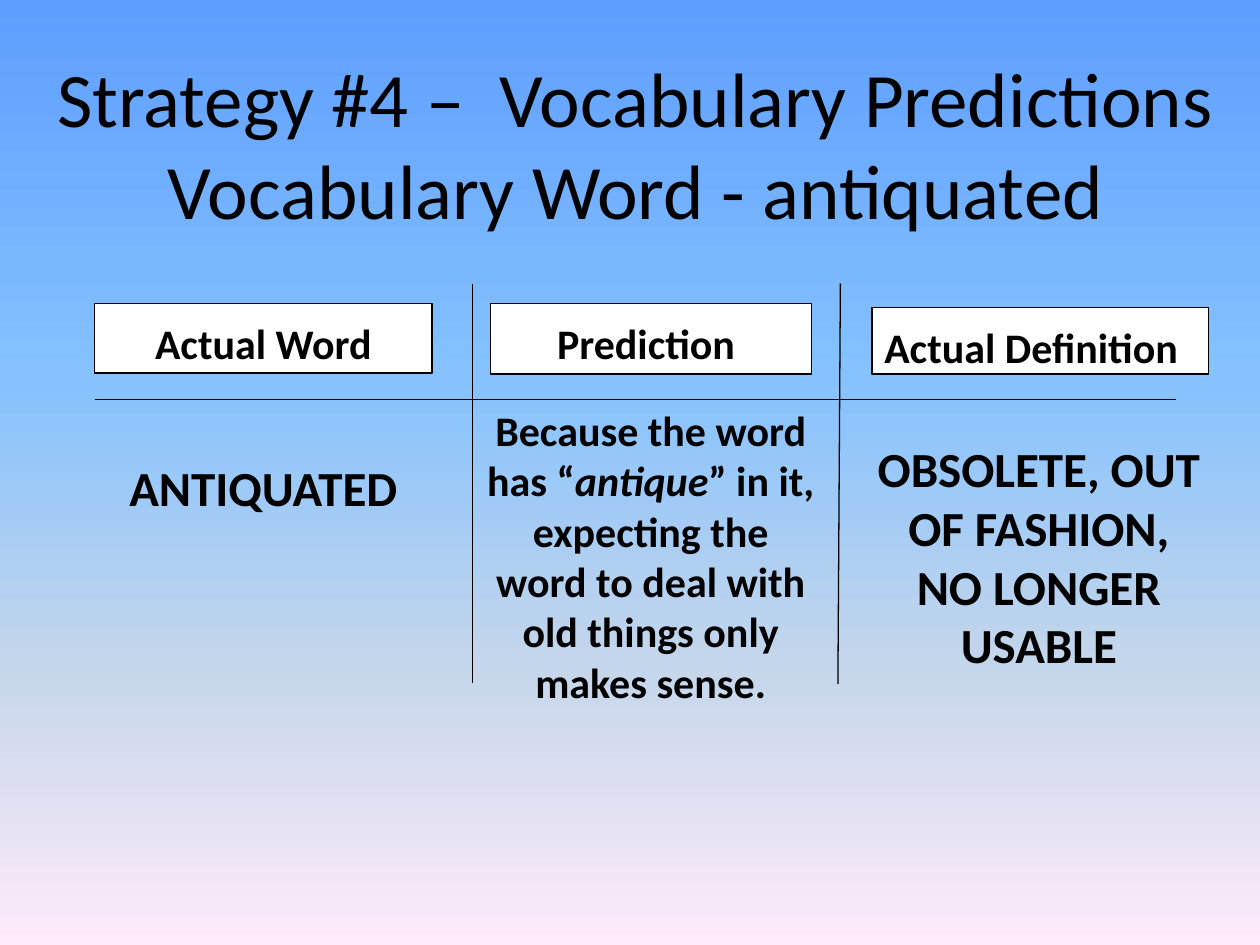
from dataclasses import dataclass

from lxml import etree
from pptx import Presentation
from pptx import util as u
from pptx.dml.color import RGBColor
from pptx.enum import shapes, text
from pptx.oxml.ns import qn


@dataclass(frozen=True)
class Theme:
    font: str = "Calibri"
    ink: str = "000000"
    paper: str = "FFFFFF"
    sky: tuple = ((0, "5E9EFF"), (40, "85C2FF"), (70, "C4D6EB"), (100, "FFEBFA"))
    title_size: int = 44
    large_size: int = 28
    body_size: int = 24
    line_width: float = 0.75


THEME = Theme()
CENTER = text.PP_ALIGN.CENTER
LEFT = text.PP_ALIGN.LEFT


def paint_background(page):
    """Fill the page with the theme's vertical gradient."""
    fill = page.background.fill
    fill.gradient()
    fill.gradient_angle = 270
    stops = page.element.find(".//" + qn("a:gsLst"))
    for stop in list(stops):
        stops.remove(stop)
    for percent, color in THEME.sky:
        stop = etree.SubElement(stops, qn("a:gs"), pos=str(percent * 1000))
        etree.SubElement(stop, qn("a:srgbClr"), val=color)


def style_line(line):
    line.color.rgb = RGBColor.from_string(THEME.ink)
    line.width = u.Pt(THEME.line_width)


def add_rule(page, start, end):
    points = [u.Inches(value) for value in (*start, *end)]
    rule = page.shapes.add_connector(shapes.MSO_CONNECTOR.STRAIGHT, *points)
    style_line(rule.line)
    etree.SubElement(rule.element.spPr, qn("a:effectLst"))


def add_span(para, words, size, bold=True, italic=False):
    span = para.add_run()
    span.text = words
    span.font.name = THEME.font
    span.font.size = u.Pt(size)
    span.font.bold = bold
    span.font.italic = italic
    span.font.color.rgb = RGBColor.from_string(THEME.ink)


def first_para(box, align, anchor=text.MSO_ANCHOR.TOP):
    frame = box.text_frame
    frame.word_wrap = True
    frame.vertical_anchor = anchor
    para = frame.paragraphs[0]
    para.alignment = align
    return para


def add_text_box(page, area, anchor=text.MSO_ANCHOR.TOP):
    """Add a text box and return its centred paragraph."""
    box = page.shapes.add_textbox(*map(u.Inches, area))
    return first_para(box, CENTER, anchor)


def add_header(page, area, words, align):
    box = page.shapes.add_shape(shapes.MSO_SHAPE.RECTANGLE, *map(u.Inches, area))
    box.shadow.inherit = False
    box.fill.solid()
    box.fill.fore_color.rgb = RGBColor.from_string(THEME.paper)
    style_line(box.line)
    para = first_para(box, align)
    para.line_spacing = 1.15
    para.space_after = u.Pt(10)
    add_span(para, words, THEME.body_size)


def main():
    deck = Presentation()
    deck.slide_width, deck.slide_height = u.Inches(10), u.Inches(7.5)
    page = deck.slides.add_slide(deck.slide_layouts[6])
    paint_background(page)

    # Title
    title = add_text_box(page, (0.17, 0.17, 9.75, 1.92), text.MSO_ANCHOR.MIDDLE)
    add_span(title, "Strategy #4 –  Vocabulary Predictions", THEME.title_size, bold=False)
    title.add_line_break()
    add_span(title, "Vocabulary Word - antiquated", THEME.title_size, bold=False)

    # Chart rules
    add_rule(page, (0.75, 3.17), (9.33, 3.17))
    add_rule(page, (3.75, 2.25), (3.75, 5.42))
    add_rule(page, (6.67, 2.25), (6.65, 5.43))

    # Column headers
    add_header(page, (0.75, 2.41, 2.68, 0.55), " Actual Word ", CENTER)
    add_header(page, (3.89, 2.41, 2.55, 0.56), "Prediction ", CENTER)
    add_header(page, (6.92, 2.44, 2.67, 0.53), "Actual Definition", LEFT)

    # Word and definition
    word = add_text_box(page, (0.84, 3.58, 2.5, 0.57))
    add_span(word, "ANTIQUATED", THEME.large_size)
    definition = add_text_box(page, (6.83, 3.43, 2.83, 1.99))
    add_span(definition, "OBSOLETE, OUT OF FASHION, NO LONGER USABLE", THEME.large_size)

    # Prediction
    prediction = add_text_box(page, (3.75, 3.16, 2.83, 2.52))
    add_span(prediction, "Because the word has “", THEME.body_size)
    add_span(prediction, "antique", THEME.body_size, italic=True)
    add_span(prediction, "” in it, expecting the word to deal with old things only makes sense.",
             THEME.body_size)

    deck.save("out.pptx")


if __name__ == "__main__":
    main()
